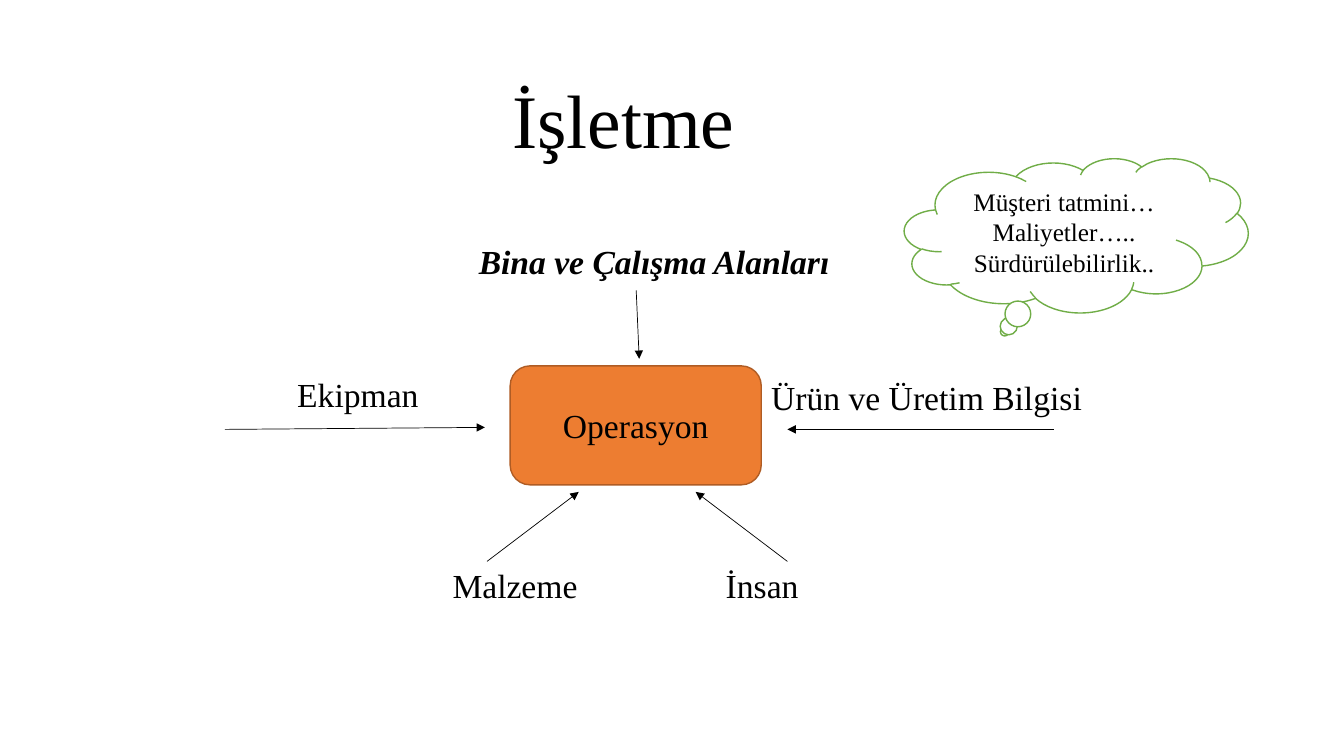
from lxml.etree import SubElement
from pptx import Presentation
from pptx.dml.color import RGBColor
from pptx.enum.shapes import MSO_CONNECTOR as Connector, MSO_SHAPE as Shape
from pptx.enum.text import MSO_ANCHOR as Anchor, PP_ALIGN as Align
from pptx.oxml.ns import qn
from pptx.util import Inches, Pt


def color(hex_code):
    return RGBColor.from_string(hex_code)


def write(frame, text, size=24, bold=False, italic=False, align=Align.LEFT,
          anchor=Anchor.TOP, spacing=1.0, font="Times New Roman", ink="000000"):
    """Fill a text frame, one paragraph per line of text."""
    frame.word_wrap = True
    frame.vertical_anchor = anchor
    for number, line in enumerate(text.split("\n")):
        paragraph = frame.add_paragraph() if number else frame.paragraphs[0]
        paragraph.alignment = align
        paragraph.line_spacing = spacing
        run = paragraph.add_run()
        run.text = line
        run.font.name = font
        run.font.size = Pt(size)
        run.font.bold = bold
        run.font.italic = italic
        run.font.color.rgb = color(ink)


class OperationsSlide:
    ARROW_INK = "000000"
    ARROW_WIDTH = Pt(0.5)
    OUTLINE_WIDTH = Pt(1)

    def __init__(self, slide):
        self.shapes = slide.shapes

    def label(self, text, left, top, width, height=0.5, **style):
        box = self.shapes.add_textbox(*map(Inches, (left, top, width, height)))
        write(box.text_frame, text, **style)

    def block(self, kind, text, bounds, fill, outline, **style):
        block = self.shapes.add_shape(kind, *map(Inches, bounds))
        block.shadow.inherit = False
        block.fill.solid()
        block.fill.fore_color.rgb = color(fill)
        block.line.color.rgb = color(outline)
        block.line.width = self.OUTLINE_WIDTH
        write(block.text_frame, text, align=Align.CENTER, anchor=Anchor.MIDDLE, **style)

    def arrow(self, start, end):
        arrow = self.shapes.add_connector(Connector.STRAIGHT, *map(Inches, start + end))
        arrow.line.color.rgb = color(self.ARROW_INK)
        arrow.line.width = self.ARROW_WIDTH
        SubElement(arrow.line._get_or_add_ln(), qn("a:tailEnd"), type="triangle")
        SubElement(arrow._element.spPr, qn("a:effectLst"))


def main():
    deck = Presentation()
    deck.slide_width, deck.slide_height = Inches(13.33), Inches(7.5)
    page = OperationsSlide(deck.slides.add_slide(deck.slide_layouts[6]))

    # Title
    page.label("İşletme", 4.98, 0.67, 2.69, 1.13,
               size=54, anchor=Anchor.MIDDLE, spacing=0.9)

    # Central operation
    page.block(Shape.ROUNDED_RECTANGLE, "Operasyon", (5.06, 3.63, 2.49, 1.18),
               fill="ED7D31", outline="AF5C24")

    # Arrows from each input to the operation
    for start, end in (
        ((10.45, 4.26), (7.81, 4.26)),
        ((2.23, 4.26), (4.81, 4.24)),
        ((4.83, 5.57), (5.74, 4.88)),
        ((6.31, 2.88), (6.34, 3.56)),
        ((7.81, 5.57), (6.9, 4.88)),
    ):
        page.arrow(start, end)

    # Inputs
    page.label("Ekipman", 2.85, 3.66, 2.33)
    page.label("Ürün ve Üretim Bilgisi", 7.55, 3.69, 3.78)
    page.label("Bina ve Çalışma Alanları", 4.65, 2.34, 3.98, bold=True, italic=True)
    page.label("Malzeme", 4.39, 5.56, 1.6)
    page.label("İnsan", 7.1, 5.56, 1.6)

    # Goals in the thought cloud
    page.block(Shape.CLOUD_CALLOUT, "Müşteri tatmini…\nMaliyetler…..\nSürdürülebilirlik..",
               (8.97, 1.57, 3.41, 1.53), fill="FFFFFF", outline="70AD47", size=18)

    deck.save("out.pptx")


if __name__ == "__main__":
    main()
